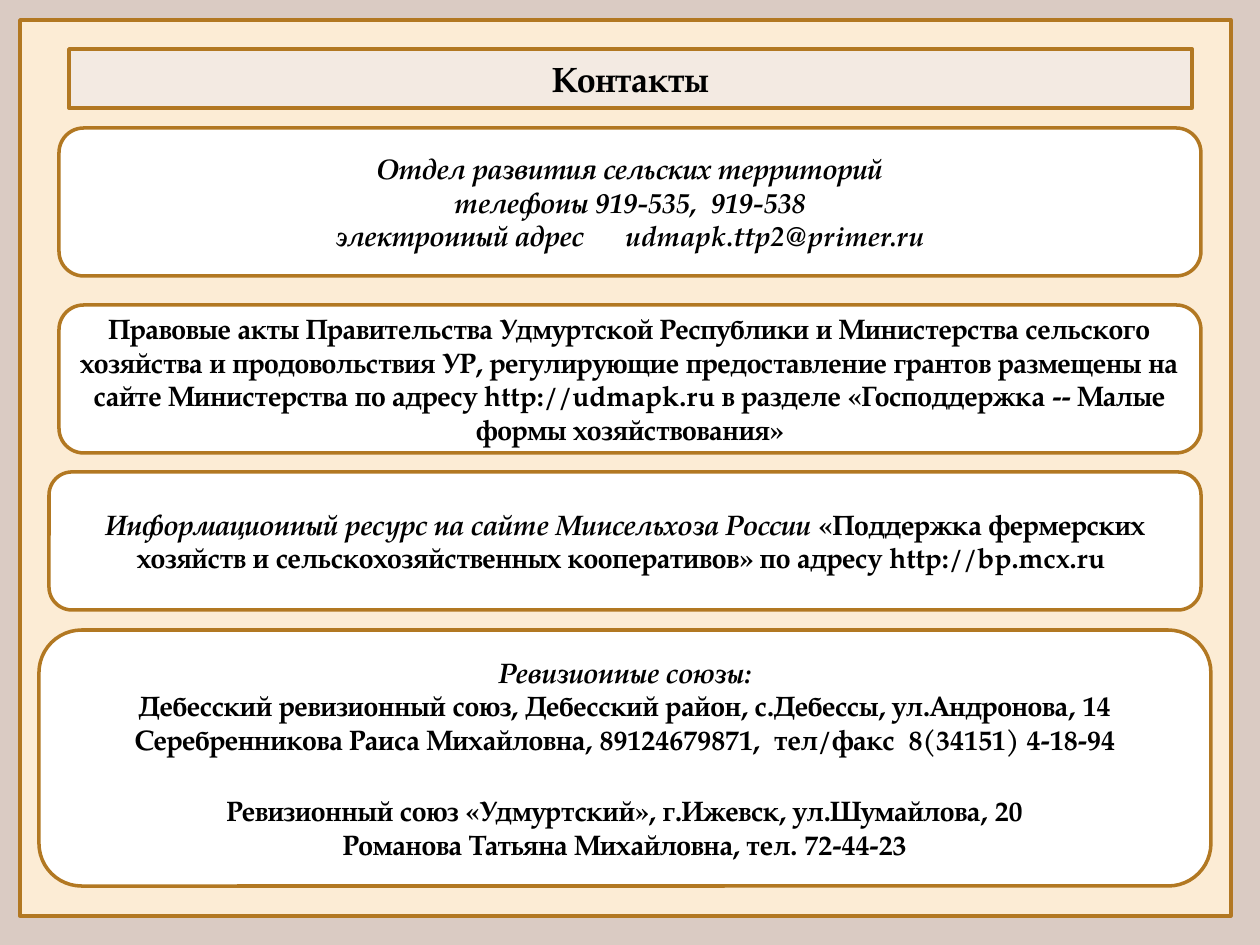
from dataclasses import dataclass

from lxml import etree
from pptx import Presentation
from pptx.dml.color import RGBColor
from pptx.enum.shapes import MSO_SHAPE
from pptx.enum.text import MSO_ANCHOR, PP_ALIGN
from pptx.oxml.ns import qn
from pptx.util import Emu, Pt

RECT = MSO_SHAPE.RECTANGLE
ROUND = MSO_SHAPE.ROUNDED_RECTANGLE
MIDDLE = MSO_ANCHOR.MIDDLE
CENTER = PP_ALIGN.CENTER
TITLE_ONLY = 5
SCALE = 914400 / 126


@dataclass(frozen=True)
class Theme:
    font: str = "TeX Gyre Pagella"
    back: str = "DACBC3"
    page: str = "FCECD5"
    head: str = "F3EAE2"
    card: str = "FFFFFF"
    edge: str = "B27822"
    text: str = "000000"
    title: int = 20
    body: int = 16
    line: int = 2


THEME = Theme()


@dataclass(frozen=True)
class Run:
    text: str
    italic: bool = False
    extra: int = 0  # letter spacing in points


@dataclass(frozen=True)
class Para:
    runs: tuple
    before: float = 0


def px(value):
    return Emu(round(value * SCALE))


def color(code):
    return RGBColor.from_string(code)


def plain(text, before=0):
    return Para((Run(text),), before)


def slant(text):
    return Para((Run(text, True),))


def gap(points, italic=False):
    """One space widened by the given number of points."""
    return Run(" ", italic, points)


def paint(shape, fill):
    shape.fill.solid()
    shape.fill.fore_color.rgb = color(fill)
    shape.line.color.rgb = color(THEME.edge)
    shape.line.width = Pt(THEME.line)


def write(shape, paras, size):
    frame = shape.text_frame
    frame.word_wrap = True
    frame.vertical_anchor = MIDDLE
    for i, item in enumerate(paras):
        para = frame.add_paragraph() if i else frame.paragraphs[0]
        para.alignment = CENTER
        para.space_before = Pt(item.before)
        font = para.font
        font.name, font.size, font.bold = THEME.font, Pt(size), True
        font.color.rgb = color(THEME.text)
        for part in item.runs:
            run = para.add_run()
            run.text = part.text
            run.font.italic = part.italic
            if part.extra:
                run.font._element.set("spc", str(part.extra * 100))


def add_box(slide, kind, box, fill):
    shape = slide.shapes.add_shape(kind, *map(px, box))
    shape.shadow.inherit = False
    paint(shape, fill)
    return shape


def add_page(slide, box):
    page = add_box(slide, RECT, box, THEME.page)
    # Keep the page behind the title
    slide.shapes.title._element.addprevious(page._element)


def set_title(slide, text, box):
    title = slide.shapes.title
    title.left, title.top, title.width, title.height = map(px, box)
    xfrm = title._element.spPr.find(qn("a:xfrm"))
    geom = etree.Element(qn("a:prstGeom"), prst="roundRect")
    etree.SubElement(geom, qn("a:avLst"))
    xfrm.addnext(geom)
    paint(title, THEME.head)
    write(title, [plain(text)], THEME.title)


def add_card(slide, box, paras):
    write(add_box(slide, ROUND, box, THEME.card), paras, THEME.body)


CARDS = [
    # Department
    ((59, 128, 1142, 148), [
        slant("Отдел развития сельских территорий"),
        Para((Run("телефоны 919-535,", True), gap(4, True),
              Run("919-538", True))),
        Para((Run("электронный адрес", True), gap(20, True),
              Run("udmapk.ttp2@primer.ru", True))),
    ]),
    # Legal acts
    ((59, 305, 1142, 148), [
        plain("Правовые акты Правительства Удмуртской Республики и "
              "Министерства сельского хозяйства и продовольствия УР, "
              "регулирующие предоставление грантов размещены на сайте "
              "Министерства по адресу http://udmapk.ru в разделе "
              "«Господдержка -- Малые формы хозяйствования»"),
    ]),
    # Information resource
    ((49, 472, 1152, 138), [
        Para((Run("Информационный ресурс на сайте Минсельхоза России ", True),
              Run("«Поддержка фермерских хозяйств и сельскохозяйственных "
                  "кооперативов» по адресу http://bp.mcx.ru "))),
    ]),
    # Audit unions
    ((39, 630, 1172, 256), [
        slant("Ревизионные союзы:"),
        plain("Дебесский ревизионный союз, Дебесский район, с.Дебессы, "
              "ул.Андронова, 14"),
        Para((Run("Серебренникова Раиса Михайловна, 89124679871,"), gap(4),
              Run("тел/факс"), gap(4), Run("8(34151) 4-18-94"))),
        plain("Ревизионный союз «Удмуртский», г.Ижевск, ул.Шумайлова, 20",
              before=21.6),
        plain("Романова Татьяна Михайловна, тел. 72-44-23"),
    ]),
]


def main():
    deck = Presentation()
    deck.slide_width, deck.slide_height = px(1260), px(945)
    slide = deck.slides.add_slide(deck.slide_layouts[TITLE_ONLY])
    back = slide.background.fill
    back.solid()
    back.fore_color.rgb = color(THEME.back)

    add_page(slide, (20, 20, 1211, 896))
    set_title(slide, "Контакты", (69, 49, 1123, 59))
    for box, paras in CARDS:
        add_card(slide, box, paras)
    deck.save("out.pptx")


if __name__ == "__main__":
    main()
